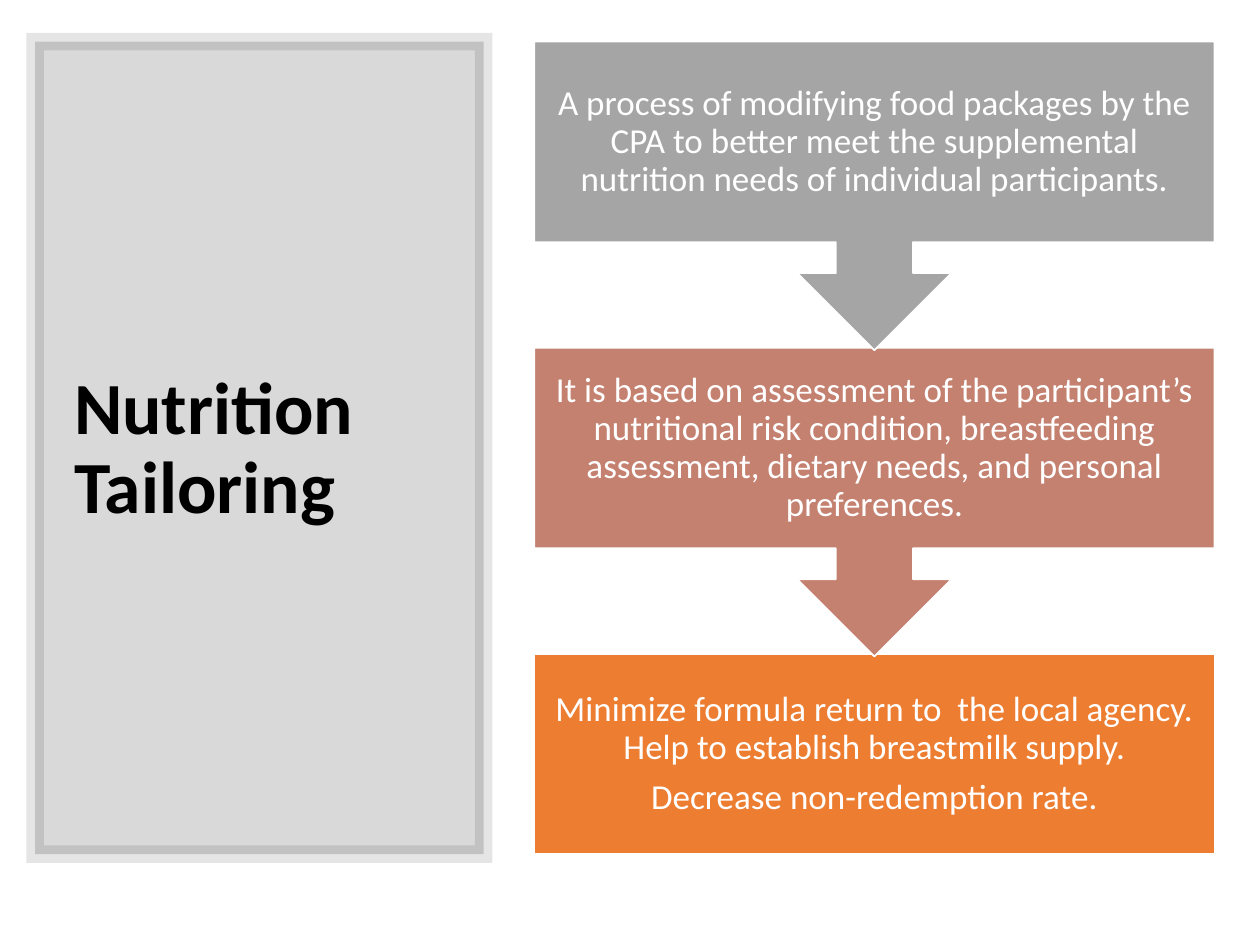
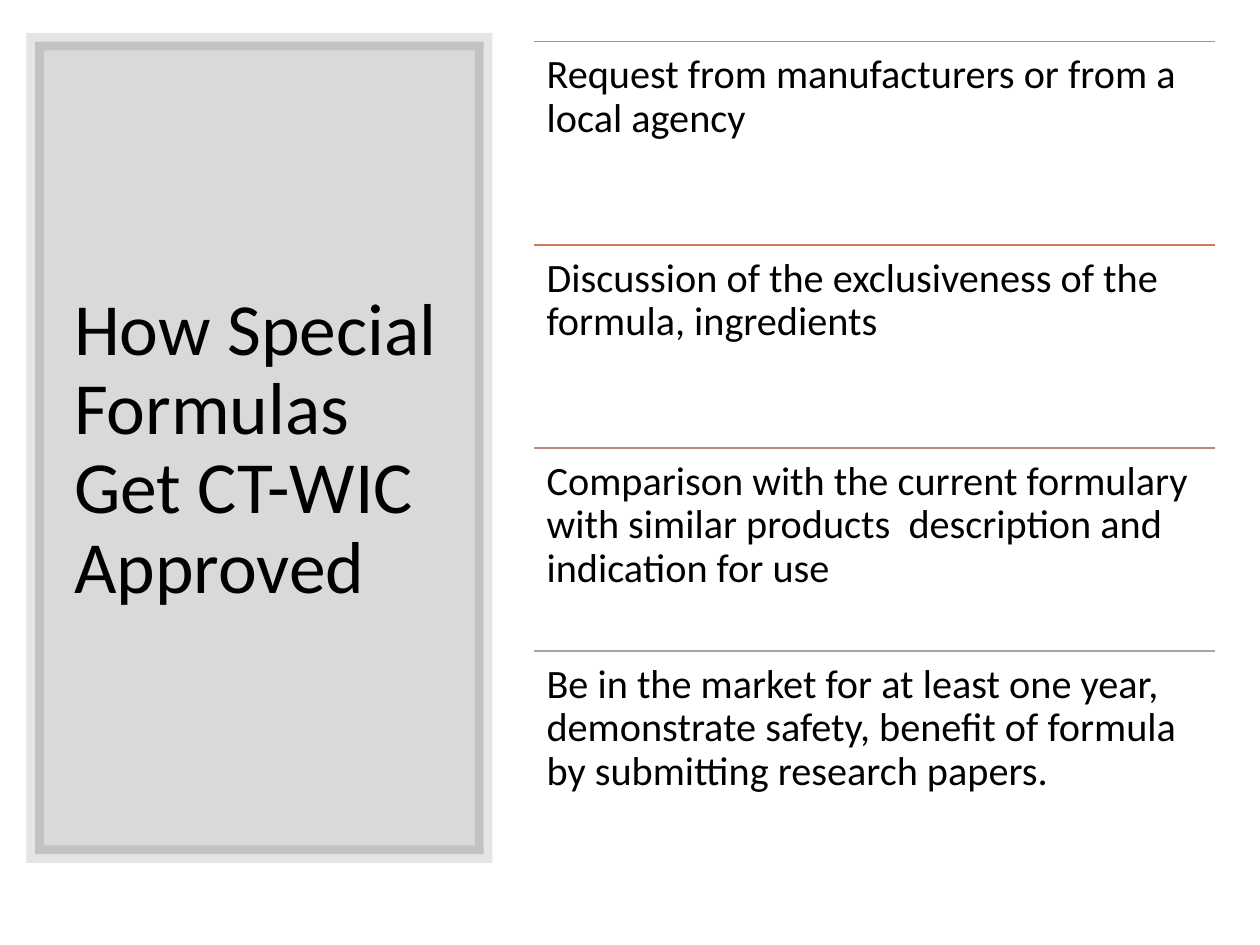
from dataclasses import dataclass

from lxml import etree
from pptx import Presentation
from pptx.dml.color import RGBColor
from pptx.enum.shapes import MSO_CONNECTOR, MSO_SHAPE
from pptx.enum.text import MSO_ANCHOR, PP_ALIGN
from pptx.oxml.ns import qn
from pptx.util import Inches, Pt

RECT, CALLOUT = MSO_SHAPE.RECTANGLE, MSO_SHAPE.DOWN_ARROW_CALLOUT
STRAIGHT = MSO_CONNECTOR.STRAIGHT
TOP, MIDDLE = MSO_ANCHOR.TOP, MSO_ANCHOR.MIDDLE
LEFT, CENTER = PP_ALIGN.LEFT, PP_ALIGN.CENTER


@dataclass(frozen=True)
class Theme:
    """Hold the colours, type sizes and grid lines of the deck."""
    font: str = "Calibri"
    ink: str = "000000"
    paper: str = "FFFFFF"
    orange: str = "ED7D31"
    rust: str = "D17B5C"
    clay: str = "C48170"
    rose: str = "B98A82"
    gray: str = "A5A5A5"
    title: int = 42
    item: int = 23
    step: int = 20
    width: float = 10
    height: float = 7.5
    top: float = 0.33
    tall: float = 6.45
    left: float = 4.24
    wide: float = 5.4


THEME = Theme()

STEPS = [
    (THEME.gray, ["A process of modifying food packages by the CPA to better meet "
                  "the supplemental nutrition needs of individual participants."]),
    (THEME.clay, ["It is based on assessment of the participant’s nutritional risk "
                  "condition, breastfeeding assessment, dietary needs, and personal "
                  "preferences."]),
    (THEME.orange, ["Minimize formula return to  the local agency. "
                    "Help to establish breastmilk supply.",
                    "Decrease non-redemption rate."]),
]

ITEMS = [
    (THEME.orange, "Request from manufacturers or from a local agency"),
    (THEME.rust, "Discussion of the exclusiveness of the formula, ingredients"),
    (THEME.rose, "Comparison with the current formulary with similar products  "
                 "description and indication for use"),
    (THEME.gray, "Be in the market for at least one year, demonstrate safety, "
                 "benefit of formula by submitting research papers."),
]


def color(code):
    """Turn a hex code into a colour."""
    return RGBColor.from_string(code)


def write(shape, lines, size, ink, pad, anchor=TOP, align=LEFT, bold=False):
    """Fill a shape with evenly styled paragraphs."""
    frame = shape.text_frame
    frame.word_wrap = True
    frame.vertical_anchor = anchor
    frame.margin_left = frame.margin_right = Inches(pad[0])
    frame.margin_top = frame.margin_bottom = Inches(pad[1])
    frame.text = "\n".join(lines)
    for para in frame.paragraphs:
        para.alignment = align
        para.line_spacing = 0.9
        para.space_after = Pt(size * 0.35)
        font = para.font
        font.name, font.size, font.bold = THEME.font, Pt(size), bold
        font.color.rgb = color(ink)


def block(slide, kind, box, fill, line, weight):
    """Add a filled and outlined shape."""
    shape = slide.shapes.add_shape(kind, *map(Inches, box))
    shape.shadow.inherit = False
    shape.fill.solid()
    shape.fill.fore_color.rgb = color(fill)
    shape.line.color.rgb = color(line)
    shape.line.width = Pt(weight)
    return shape


def label(slide, box, lines, size, pad, **style):
    """Add a text box in the ink colour."""
    shape = slide.shapes.add_textbox(*map(Inches, box))
    write(shape, lines, size, THEME.ink, pad, **style)


def panel(slide, title, bold=False):
    """Add the sheer side panel with its title."""
    shape = block(slide, RECT, (0.28, THEME.top, 3.56, THEME.tall),
                  THEME.ink, THEME.ink, 10)
    props = shape._element.spPr
    for tint, share in zip(props.iter(qn("a:srgbClr")), (15, 10)):
        etree.SubElement(tint, qn("a:alpha")).set("val", str(share * 1000))
    etree.SubElement(props.find(qn("a:ln")), qn("a:miter")).set("lim", "800000")
    label(slide, (0.49, 0.7, 3.12, 5.75), [title], THEME.title, (0.1, 0.05),
          anchor=MIDDLE, bold=bold)


def flow(slide, steps):
    """Stack the steps, each arrow lying over the next box."""
    body, full = 1.59, 2.45
    pitch = (THEME.tall - body) / (len(steps) - 1)
    last = len(steps) - 1
    for row, (fill, lines) in reversed(list(enumerate(steps))):
        kind, tall = (RECT, body) if row == last else (CALLOUT, full)
        box = THEME.left, THEME.top + row * pitch, THEME.wide, tall
        shape = block(slide, kind, box, fill, THEME.paper, 1)
        write(shape, lines, THEME.step, THEME.paper, (0.16, 0.16),
              anchor=MIDDLE, align=CENTER)


def rule(slide, top, tint):
    """Draw a thin line across the content column."""
    ends = THEME.left, top, THEME.left + THEME.wide, top
    line = slide.shapes.add_connector(STRAIGHT, *map(Inches, ends))
    line.line.color.rgb = color(tint)
    line.line.width = Pt(1)
    etree.SubElement(line._element.spPr, qn("a:effectLst"))


def roster(slide, items):
    """List the items in equal rows under coloured rules."""
    pitch = THEME.tall / len(items)
    for row, (tint, text) in enumerate(items):
        top = THEME.top + row * pitch
        rule(slide, top, tint)
        label(slide, (THEME.left, top, THEME.wide, pitch), [text],
              THEME.item, (0.1, 0.1))


def main():
    """Build and save the deck."""
    deck = Presentation()
    deck.slide_width, deck.slide_height = Inches(THEME.width), Inches(THEME.height)
    blank = deck.slide_layouts[6]

    slide = deck.slides.add_slide(blank)
    panel(slide, "Nutrition Tailoring", bold=True)
    flow(slide, STEPS)

    slide = deck.slides.add_slide(blank)
    panel(slide, "How Special Formulas Get CT-WIC Approved")
    roster(slide, ITEMS)

    deck.save("out.pptx")


if __name__ == "__main__":
    main()
